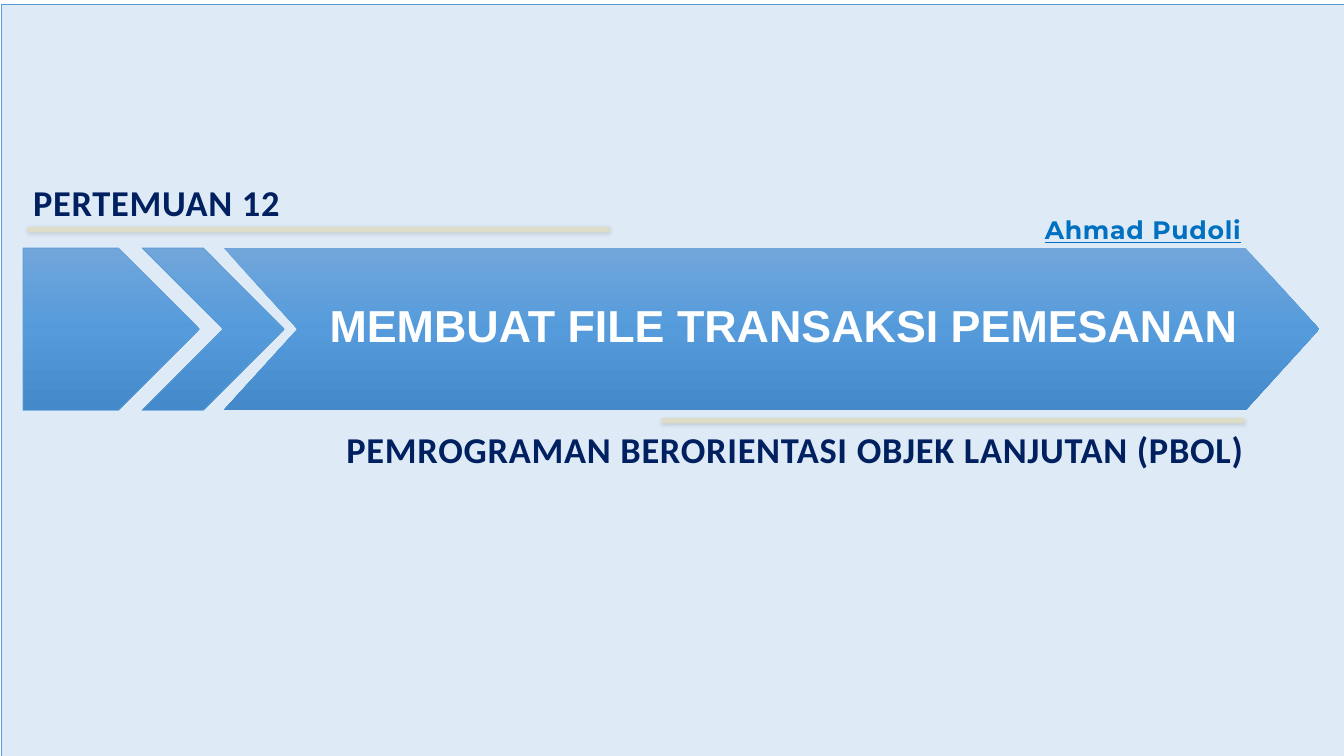
from lxml import etree
from pptx import Presentation
from pptx.dml.color import RGBColor
from pptx.enum.shapes import MSO_SHAPE
from pptx.enum.text import MSO_ANCHOR, MSO_AUTO_SIZE, PP_ALIGN
from pptx.oxml.ns import qn
from pptx.util import Pt

RECTANGLE = MSO_SHAPE.RECTANGLE
PENTAGON = MSO_SHAPE.PENTAGON
CHEVRON = MSO_SHAPE.CHEVRON
MIDDLE = MSO_ANCHOR.MIDDLE
NO_AUTOFIT = MSO_AUTO_SIZE.NONE
LEFT, RIGHT = PP_ALIGN.LEFT, PP_ALIGN.RIGHT

PALE_BLUE = RGBColor(0xDE, 0xEB, 0xF7)
BLUE = RGBColor(0x5B, 0x9B, 0xD5)
BLUE_TOP = RGBColor(0x71, 0xA6, 0xDB)
BLUE_MIDDLE = RGBColor(0x55, 0x9B, 0xDB)
BLUE_BOTTOM = RGBColor(0x44, 0x8A, 0xCA)
PALE_GOLD = RGBColor(0xDD, 0xDC, 0xC6)
NAVY = RGBColor(0x00, 0x20, 0x60)
LINK_BLUE = RGBColor(0x00, 0x70, 0xC0)
WHITE = RGBColor(0xFF, 0xFF, 0xFF)

SLIDE_WIDTH, SLIDE_HEIGHT = 960, 540
BAND_TOP, BAND_HEIGHT = 177.1, 116
RULE_WIDTH, RULE_HEIGHT = 416, 4


def add_filled_shape(page, kind, left, top, width, height, fill=None, line=None):
    shape = page.shapes.add_shape(kind, Pt(left), Pt(top), Pt(width), Pt(height))
    shape.shadow.inherit = False
    if fill is not None:
        shape.fill.solid()
        shape.fill.fore_color.rgb = fill
    if line is None:
        shape.line.fill.background()
    else:
        shape.line.color.rgb = line
        shape.line.width = Pt(0.5)
    return shape


def set_vertical_gradient(shape, colours):
    """Spread the colours evenly from top to bottom."""
    shape.fill.gradient()
    gradient = shape.fill._xPr.find(qn("a:gradFill"))
    for child in list(gradient):
        gradient.remove(child)
    stops = etree.SubElement(gradient, qn("a:gsLst"))
    for index, colour in enumerate(colours):
        position = 100000 * index // (len(colours) - 1)
        stop = etree.SubElement(stops, qn("a:gs"), pos=str(position))
        etree.SubElement(stop, qn("a:srgbClr"), val=str(colour))
    etree.SubElement(gradient, qn("a:lin"), ang="5400000", scaled="0")


def add_band_part(page, kind, left, width, point, line=None):
    part = add_filled_shape(page, kind, left, BAND_TOP, width, BAND_HEIGHT, line=line)
    part.adjustments[0] = point
    set_vertical_gradient(part, (BLUE_TOP, BLUE_MIDDLE, BLUE_BOTTOM))


def add_rule(page, left, top):
    """Draw a pale gold bar with a soft shadow below it."""
    rule = add_filled_shape(page, RECTANGLE, left, top, RULE_WIDTH, RULE_HEIGHT, PALE_GOLD)
    effects = rule._element.spPr.find(qn("a:effectLst"))
    shadow = etree.SubElement(effects, qn("a:outerShdw"), blurRad=str(Pt(3)),
                              dist=str(Pt(1)), dir="5400000", rotWithShape="0")
    colour = etree.SubElement(shadow, qn("a:srgbClr"), val="000000")
    etree.SubElement(colour, qn("a:alpha"), val="12000")


def write_text(box, text, *, at, size, font, colour, align=LEFT, underline=False, spacing=0):
    box.left, box.top, box.width, box.height = (Pt(length) for length in at)
    frame = box.text_frame
    frame.word_wrap = True
    frame.auto_size = NO_AUTOFIT
    frame.vertical_anchor = MIDDLE
    para = frame.paragraphs[0]
    para.alignment = align
    para.space_before = Pt(0)
    para.line_spacing = 1.0
    span = para.add_run()
    span.text = text
    span.font.size = Pt(size)
    span.font.name = font
    span.font.bold = True
    span.font.underline = underline
    span.font.color.rgb = colour
    if spacing:
        span.font._element.set("spc", str(int(spacing * 100)))


def add_text_box(page):
    return page.shapes.add_textbox(0, 0, Pt(72), Pt(72))


def main():
    deck = Presentation()
    deck.slide_width, deck.slide_height = Pt(SLIDE_WIDTH), Pt(SLIDE_HEIGHT)
    page = deck.slides.add_slide(deck.slide_layouts[0])
    title, subtitle = page.placeholders

    add_filled_shape(page, RECTANGLE, 0.9, 3, SLIDE_WIDTH, SLIDE_HEIGHT, PALE_BLUE, BLUE)
    add_band_part(page, PENTAGON, 16.5, 126, 0.5, BLUE)
    add_band_part(page, CHEVRON, 101.5, 101.5, 0.57, BLUE)
    add_band_part(page, CHEVRON, 159.8, 782.6, 0.455)
    add_rule(page, 19.5, 162)
    add_rule(page, 473, 298.5)

    heading = {"size": 26, "font": "Calibri", "colour": NAVY, "spacing": 0.5}
    write_text(add_text_box(page), "PERTEMUAN 12", at=(16.5, 131, 336, 26), **heading)
    write_text(subtitle, "PEMROGRAMAN BERORIENTASI OBJEK LANJUTAN (PBOL)",
               at=(143.3, 307.5, 753, 26), align=RIGHT, **heading)
    write_text(title, "MEMBUAT FILE TRANSAKSI PEMESANAN", at=(228.2, 191, 679, 82),
               size=32, font="Arial", colour=WHITE)
    write_text(add_text_box(page), "Ahmad Pudoli", at=(642.2, 151.2, 251.3, 26), size=18,
               font="Montserrat", colour=LINK_BLUE, align=RIGHT, underline=True, spacing=0.5)
    for placeholder in (subtitle, title):
        page.shapes._spTree.append(placeholder._element)

    deck.save("out.pptx")


if __name__ == "__main__":
    main()
